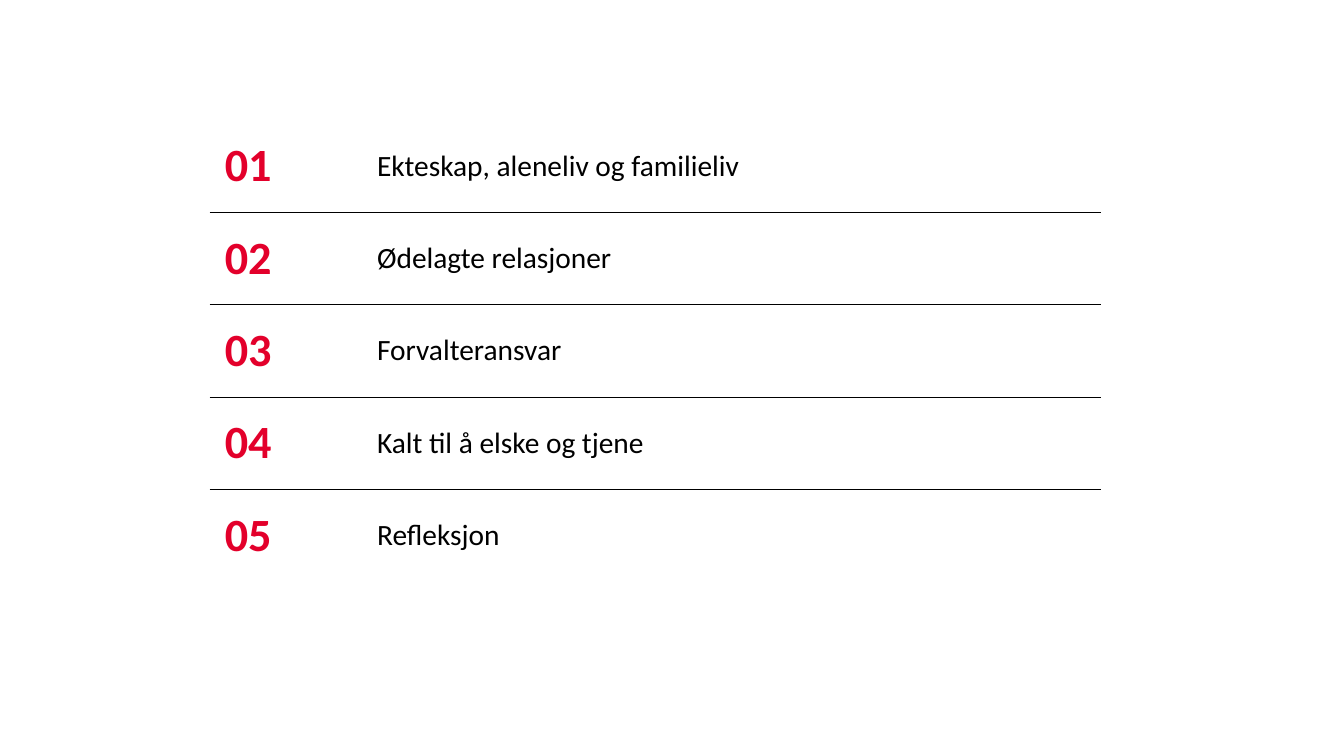
from lxml import etree
from pptx import Presentation
from pptx.dml.color import RGBColor
from pptx.enum import text
from pptx.oxml import ns
from pptx.util import Inches, Pt

RED = RGBColor(0xE3, 0x00, 0x2B)
BLACK = RGBColor(0x00, 0x00, 0x00)
FONT = "Calibri"
NO_STYLE = "{2D5ABB26-0587-4C30-8999-92F81FD0307C}"
TOPICS = [
    "Ekteskap, aleneliv og familieliv",
    "Ødelagte relasjoner",
    "Forvalteransvar",
    "Kalt til å elske og tjene",
    "Refleksjon",
]


def add_rule(cell, side):
    properties = cell._tc.get_or_add_tcPr()
    line = etree.SubElement(properties, ns.qn(f"a:{side}"), w=str(Pt(0.5)))
    fill = etree.SubElement(line, ns.qn("a:solidFill"))
    etree.SubElement(fill, ns.qn("a:srgbClr"), val=str(BLACK))


def write_cell(cell, words, size, color, bold):
    cell.margin_left = cell.margin_right = Inches(0.15)
    cell.margin_top = cell.margin_bottom = Inches(0.15)
    cell.vertical_anchor = text.MSO_ANCHOR.MIDDLE
    cell.text_frame.text = words
    font = cell.text_frame.paragraphs[0].runs[0].font
    font.name = FONT
    font.size = Pt(size)
    font.bold = bold
    font.color.rgb = color


def add_agenda(page, left, top, width, height):
    frame = page.shapes.add_table(len(TOPICS), 2, left, top, width, height)
    table = frame.table
    table.first_row = False
    table.horz_banding = False
    table._tbl.tblPr.find(ns.qn("a:tableStyleId")).text = NO_STYLE
    table.columns[0].width = Inches(1.51)
    table.columns[1].width = width - Inches(1.51)
    last = len(TOPICS) - 1
    for index, topic in enumerate(TOPICS):
        number_cell, topic_cell = table.rows[index].cells
        write_cell(number_cell, f"{index + 1:02}", 33, RED, True)
        write_cell(topic_cell, topic, 21, BLACK, False)
        for cell in (number_cell, topic_cell):
            if index > 0:
                add_rule(cell, "lnT")
            if index < last:
                add_rule(cell, "lnB")
            cell.fill.background()


def main():
    deck = Presentation()
    deck.slide_width = Inches(13.33)
    deck.slide_height = Inches(7.5)
    page = deck.slides.add_slide(deck.slide_layouts[6])
    add_agenda(page, Inches(2.08), Inches(1.19), Inches(8.84), Inches(4.58))
    deck.save("out.pptx")


if __name__ == "__main__":
    main()
